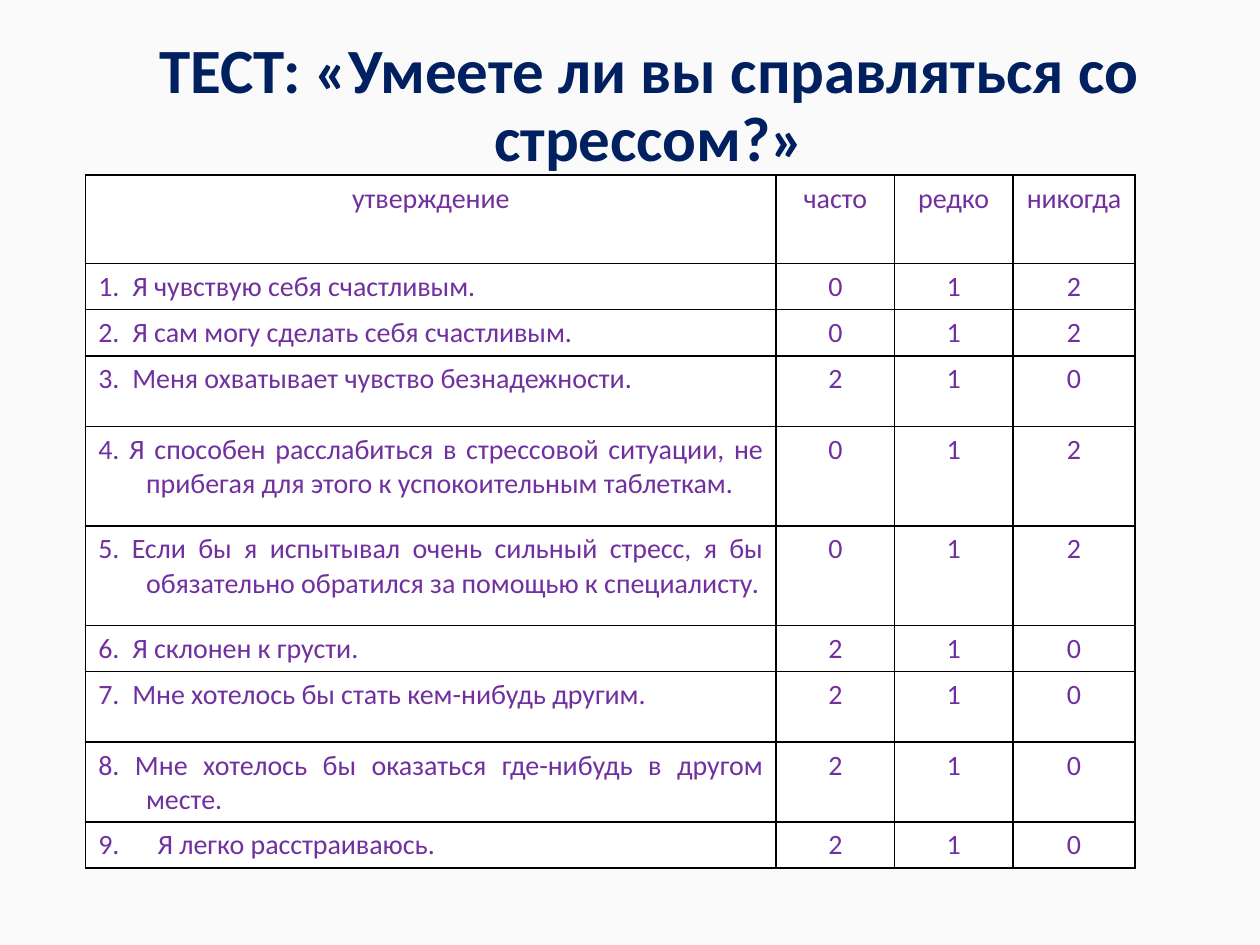
from dataclasses import dataclass
from pptx import Presentation
from pptx.util import Inches, Pt
from pptx.dml.color import RGBColor as RGB
from pptx.enum.text import PP_ALIGN as Align, MSO_ANCHOR as Anchor
from pptx.oxml import parse_xml
from pptx.oxml.ns import nsdecls


@dataclass
class Theme:
    back: RGB = RGB.from_string("FAFAFA")
    cell: RGB = RGB.from_string("FFFFFF")
    title: RGB = RGB.from_string("002060")
    text: RGB = RGB.from_string("7030A0")
    line: str = "000000"
    font: str = "Calibri"
    big: int = 36
    small: int = 16
    rule: int = 1


theme = Theme()


def style(para, size, color, align):
    para.alignment = align
    for run in para.runs:
        run.font.name = theme.font
        run.font.size = Pt(size)
        run.font.color.rgb = color


def border(cell):
    props = cell._tc.get_or_add_tcPr()
    for spot, side in enumerate(("lnL", "lnR", "lnT", "lnB")):
        props.insert(spot, parse_xml(
            f'<a:{side} {nsdecls("a")} w="{Pt(theme.rule)}"><a:solidFill>'
            f'<a:srgbClr val="{theme.line}"/></a:solidFill></a:{side}>'))


deck = Presentation()
deck.slide_width, deck.slide_height = Inches(10), Inches(7.5)
slide = deck.slides.add_slide(deck.slide_layouts[6])
slide.background.fill.solid()
slide.background.fill.fore_color.rgb = theme.back

title = slide.shapes.add_textbox(Inches(0.31), Inches(0.32), Inches(9.69), Inches(1.06))
frame = title.text_frame
frame.word_wrap = True
frame.vertical_anchor = Anchor.MIDDLE
frame.text = "ТЕСТ: «Умеете ли вы справляться со стрессом?»"
head = frame.paragraphs[0]
head.line_spacing = 0.9
style(head, theme.big, theme.title, Align.CENTER)
head.runs[0].font.bold = True

wide, short, far = 0.38, 0.27, 0.47
up, down = ("0", "1", "2"), ("2", "1", "0")
rows = [
    (0.7, wide, "утверждение", ("часто", "редко", "никогда")),
    (0.33, short, "1.\tЯ чувствую себя счастливым.", up),
    (0.34, short, "2.\tЯ сам могу сделать себя счастливым.", up),
    (0.56, short, "3.\tМеня охватывает чувство безнадежности.", down),
    (0.79, wide, "4. Я способен расслабиться в стрессовой ситуации, не "
     "прибегая для этого к успокоительным таблеткам.", up),
    (0.79, wide, "5. Если бы я испытывал очень сильный стресс, я бы "
     "обязательно обратился за помощью к специалисту.", up),
    (0.33, short, "6.\tЯ склонен к грусти.", down),
    (0.56, short, "7.\tМне хотелось бы стать кем-нибудь другим.", down),
    (0.56, wide, "8. Мне хотелось бы оказаться где-нибудь в другом месте.", down),
    (0.33, far, "9.\tЯ легко расстраиваюсь.", down),
]
cols = [5.48, 0.94, 0.94, 0.97]

table = slide.shapes.add_table(
    len(rows), len(cols), Inches(0.68), Inches(1.39),
    Inches(sum(cols)), Inches(sum(row[0] for row in rows))).table
table.first_row = table.horz_banding = False
for col, width in zip(table.columns, cols):
    col.width = Inches(width)

for r, (height, hang, claim, marks) in enumerate(rows):
    table.rows[r].height = Inches(height)
    for c, text in enumerate((claim, *marks)):
        cell = table.cell(r, c)
        cell.fill.solid()
        cell.fill.fore_color.rgb = theme.cell
        border(cell)
        para = cell.text_frame.paragraphs[0]
        para.text = text
        style(para, theme.small, theme.text, Align.JUSTIFY if r and c == 0 else Align.CENTER)
        inset = Inches(wide if c else hang)
        props = para._p.get_or_add_pPr()
        props.set("marL", str(inset))
        props.set("indent", str(-inset))

deck.save("out.pptx")
